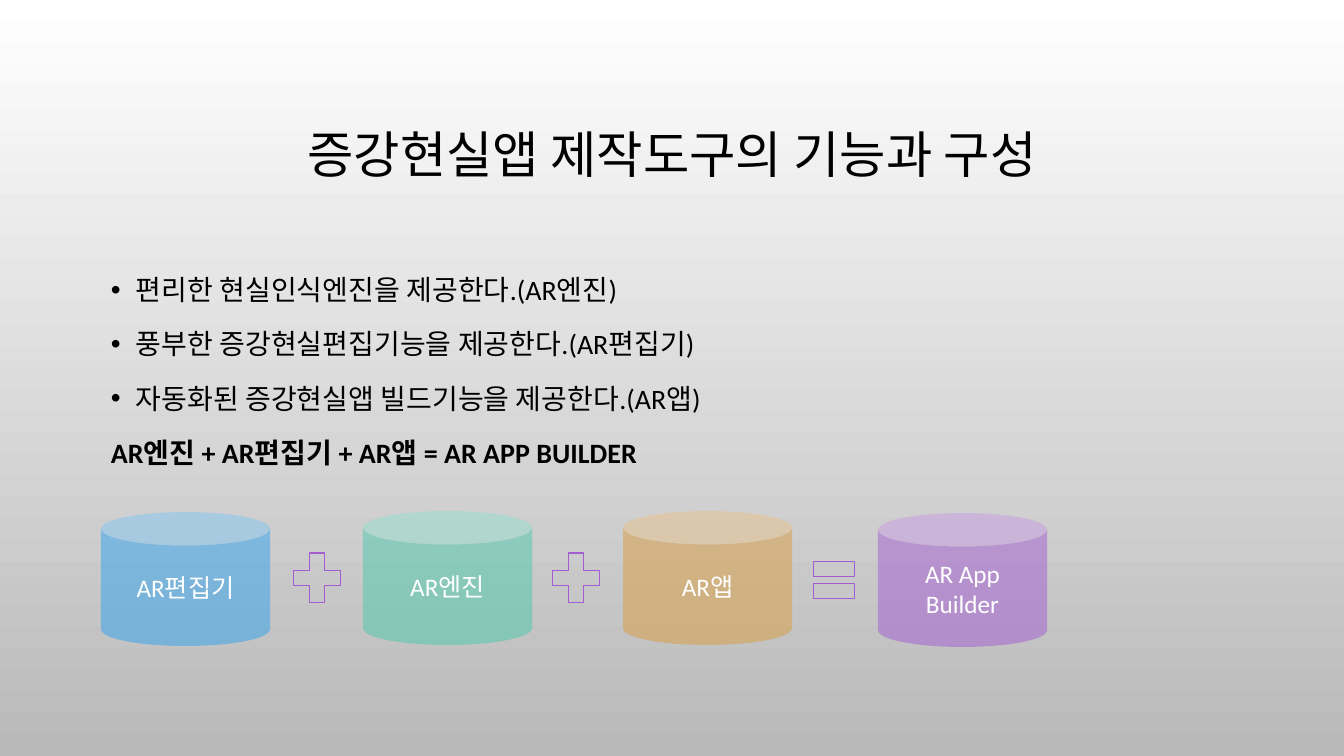
from pptx import Presentation
from pptx.dml.color import RGBColor
from pptx.enum.shapes import MSO_SHAPE as Preset
from pptx.enum.text import MSO_ANCHOR as Anchor, PP_ALIGN as Align
from pptx.oxml.ns import qn
from pptx.util import Pt
from lxml.etree import SubElement
from dataclasses import dataclass

# Content
TITLE = "증강현실앱 제작도구의 기능과 구성"
FEATURES = [
    "편리한 현실인식엔진을 제공한다.(AR엔진)",
    "풍부한 증강현실편집기능을 제공한다.(AR편집기)",
    "자동화된 증강현실앱 빌드기능을 제공한다.(AR앱)",
]
FORMULA = "AR엔진 + AR편집기 + AR앱 = AR APP BUILDER"
# Label, left, top, colour
CANS = [
    ("AR편집기", 101, 512, "2FA3EE"),
    ("AR엔진", 363, 511, "4BCAAD"),
    ("AR앱", 623, 511, "D99C3F"),
    ("AR App Builder", 878, 513, "A35DD1"),
]
# Preset, left, top, width, height
OPERATORS = [
    (Preset.MATH_PLUS, 285, 544, 64, 68),
    (Preset.MATH_PLUS, 544, 544, 64, 68),
    (Preset.MATH_EQUAL, 806, 548, 56, 64),
]


@dataclass(frozen=True)
class Theme:
    font: str = "Calibri"
    ink: str = "000000"
    can_ink: str = "FFFFFF"
    operator: str = "A35DD1"
    background: tuple = ("FFFFFF", "B9B9B9")
    title_size: int = 36
    body_size: int = 20
    can_size: int = 18


THEME = Theme()
EMU_PER_PX = 914400 / 100.8
MARGIN, CONTENT_WIDTH = 101, 1142
CAN_WIDTH, CAN_HEIGHT = 169, 134
BULLET_INDENT = 25


def px(length):
    return round(length * EMU_PER_PX)


def color(code):
    return RGBColor.from_string(code)


def style(para, size, ink, bold=False):
    font = para.font
    font.name, font.size, font.bold = THEME.font, Pt(size), bold
    font.color.rgb = color(ink)


def add_text(page, *bounds):
    frame = page.shapes.add_textbox(*map(px, bounds)).text_frame
    frame.word_wrap = True
    return frame


def add_bullet(para):
    properties = para._p.get_or_add_pPr()
    properties.set("marL", str(px(BULLET_INDENT)))
    properties.set("indent", str(-px(BULLET_INDENT)))
    SubElement(properties, qn("a:buFont"), typeface="Arial")
    SubElement(properties, qn("a:buChar"), char="•")


def add_preset(page, preset, *bounds):
    shape = page.shapes.add_shape(preset, *map(px, bounds))
    shape.shadow.inherit = False
    return shape


def paint_background(page):
    fill = page.background.fill
    fill.gradient()
    fill.gradient_angle = 270
    for stop, code in zip(fill.gradient_stops, THEME.background):
        stop.color.rgb = color(code)


def add_title(page):
    frame = add_text(page, MARGIN, 69, CONTENT_WIDTH, 176)
    frame.vertical_anchor = Anchor.MIDDLE
    para = frame.paragraphs[0]
    para.text, para.alignment, para.line_spacing = TITLE, Align.CENTER, 0.9
    style(para, THEME.title_size, THEME.ink)


def add_body(page):
    frame = add_text(page, MARGIN, 261, CONTENT_WIDTH, 377)
    for index, line in enumerate(FEATURES + [FORMULA]):
        para = frame.paragraphs[0] if index == 0 else frame.add_paragraph()
        para.text, para.line_spacing = line, 1.2
        if index:
            para.space_before = Pt(10)
        if line != FORMULA:
            add_bullet(para)
        style(para, THEME.body_size, THEME.ink, bold=line == FORMULA)


def add_can(page, label, left, top, code):
    can = add_preset(page, Preset.CAN, left, top, CAN_WIDTH, CAN_HEIGHT)
    can.fill.solid()
    can.fill.fore_color.rgb = color(code)
    # Half-transparent fill
    tint = can._element.spPr.find(".//" + qn("a:srgbClr"))
    SubElement(tint, qn("a:alpha"), val="50000")
    can.line.fill.background()
    frame = can.text_frame
    frame.word_wrap, frame.vertical_anchor = True, Anchor.MIDDLE
    para = frame.paragraphs[0]
    para.text, para.alignment = label, Align.CENTER
    style(para, THEME.can_size, THEME.can_ink)


def add_operator(page, preset, *bounds):
    operator = add_preset(page, preset, *bounds)
    operator.fill.background()
    operator.line.color.rgb = color(THEME.operator)
    operator.line.width = Pt(0.75)


def main():
    deck = Presentation()
    deck.slide_width, deck.slide_height = px(1344), px(756)
    page = deck.slides.add_slide(deck.slide_layouts[6])
    paint_background(page)
    add_title(page)
    add_body(page)
    for can in CANS:
        add_can(page, *can)
    for operator in OPERATORS:
        add_operator(page, *operator)
    deck.save("out.pptx")


if __name__ == "__main__":
    main()
